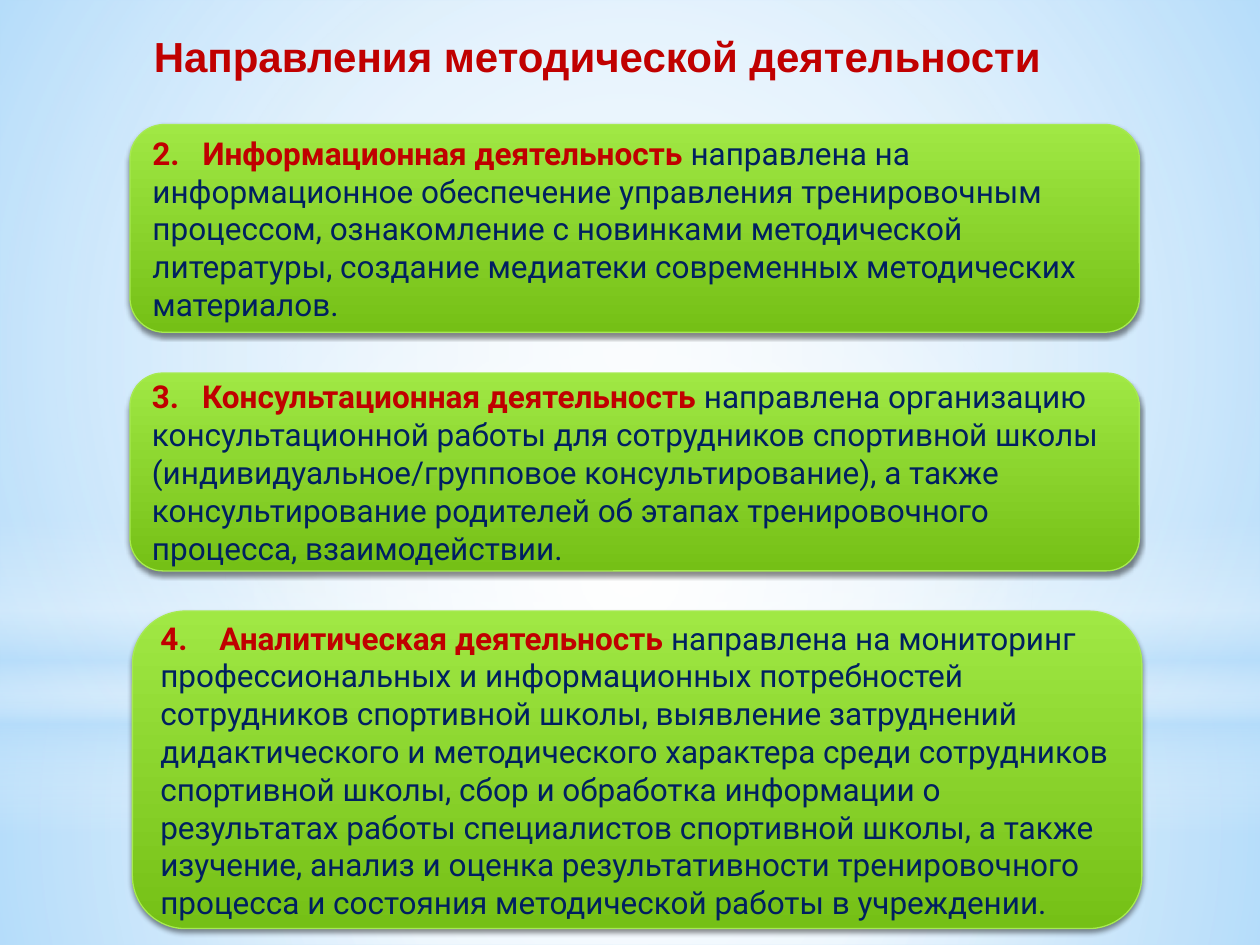
from dataclasses import dataclass
from typing import NamedTuple, Optional

import pptx
import pptx.dml.color
import pptx.enum.shapes
import pptx.enum.text
import pptx.oxml
import pptx.oxml.ns
import pptx.util

Cm = pptx.util.Cm
Pt = pptx.util.Pt
Preset = pptx.enum.shapes.MSO_SHAPE
Align = pptx.enum.text.PP_ALIGN
Anchor = pptx.enum.text.MSO_ANCHOR
AutoSize = pptx.enum.text.MSO_AUTO_SIZE
NAMESPACE = pptx.oxml.ns.nsdecls("a")


@dataclass(frozen=True)
class Theme:
    background: str = "B9DEFA"
    light: str = "FFFFFF"
    sky: str = "B4DCFA"
    accent: str = "C00000"
    body: str = "002060"
    card_top: str = "A0E844"
    card_bottom: str = "75C016"
    card_line: str = "A7EA52"
    shadow: str = "000000"
    title_font: str = "Arial"
    body_font: str = "Roboto"
    title_size: int = 24
    body_size: int = 18


THEME = Theme()


class Box(NamedTuple):
    """Left, top, width and height in centimetres."""
    left: float
    top: float
    width: float
    height: float

    def lengths(self) -> list:
        return [Cm(value) for value in self]


class Stop(NamedTuple):
    position: int
    colour: str
    opacity: int = 100


class Backdrop(NamedTuple):
    preset: int
    box: Box
    stops: list
    angle: Optional[int] = None  # None means a circular gradient


class Card(NamedTuple):
    box: Box
    number: str
    heading: str
    text: str
    tab: float


SLIDE_WIDTH, SLIDE_HEIGHT = 25.4, 19.05
HORIZON = 14.17
CARD_LEFT, CARD_WIDTH = 2.62, 20.35
TITLE_BOX = Box(2.54, 0.48, 19, 1.27)

BACKDROPS = [
    # Ground, sky, horizon band and central glow
    Backdrop(Preset.RECTANGLE, Box(0, HORIZON, SLIDE_WIDTH, SLIDE_HEIGHT - HORIZON),
             [Stop(0, THEME.light, 91), Stop(37, THEME.light, 76), Stop(100, THEME.sky, 79)]),
    Backdrop(Preset.RECTANGLE, Box(0, 0, SLIDE_WIDTH, HORIZON),
             [Stop(0, THEME.light, 89), Stop(48, THEME.light, 62), Stop(100, THEME.sky, 79)]),
    Backdrop(Preset.RECTANGLE, Box(0, 10.46, SLIDE_WIDTH, 6.35),
             [Stop(0, THEME.light, 0), Stop(29, THEME.light, 30), Stop(45, THEME.sky, 40),
              Stop(55, THEME.light, 26), Stop(65, THEME.sky, 60), Stop(100, THEME.light, 0)], 90),
    Backdrop(Preset.OVAL, Box(0, 4.45, SLIDE_WIDTH, HORIZON),
             [Stop(0, THEME.light), Stop(56, THEME.light, 0)]),
]

CARDS = [
    Card(Box(CARD_LEFT, 2.51, CARD_WIDTH, 4.19), "2.", "Информационная деятельность ",
         "направлена на информационное обеспечение управления тренировочным процессом, "
         "ознакомление с новинками методической литературы, создание медиатеки "
         "современных методических материалов.", 1.01),
    Card(Box(CARD_LEFT, 7.52, CARD_WIDTH, 3.99), "3.", "Консультационная деятельность ",
         "направлена организацию консультационной работы для сотрудников спортивной школы "
         "(индивидуальное/групповое консультирование), а также консультирование родителей "
         "об этапах тренировочного процесса, взаимодействии.", 1.01),
    Card(Box(CARD_LEFT + 0.05, 12.32, CARD_WIDTH, 6.4), "4.", "Аналитическая деятельность ",
         "направлена на мониторинг профессиональных и информационных потребностей "
         "сотрудников спортивной школы, выявление затруднений дидактического и "
         "методического характера среди сотрудников спортивной школы, сбор и обработка "
         "информации о результатах работы специалистов спортивной школы, а также изучение, "
         "анализ и оценка результативности тренировочного процесса и состояния "
         "методической работы в учреждении.", 1.19),
]


def rgb(colour: str) -> pptx.dml.color.RGBColor:
    return pptx.dml.color.RGBColor.from_string(colour)


def set_attributes(target, values: dict) -> None:
    for name, value in values.items():
        setattr(target, name, value)


def add_run(paragraph, text: str, font: str, size: int, colour: str, bold: bool) -> None:
    run = paragraph.add_run()
    run.text = text
    set_attributes(run.font, {"name": font, "size": Pt(size), "bold": bold})
    run.font.color.rgb = rgb(colour)


def fill_gradient(shape, stops: list, angle: Optional[int]) -> None:
    stop_xml = "".join(
        f'<a:gs pos="{stop.position * 1000}"><a:srgbClr val="{stop.colour}">'
        f'<a:alpha val="{stop.opacity * 1000}"/></a:srgbClr></a:gs>' for stop in stops)
    if angle is None:
        direction = ('<a:path path="circle"><a:fillToRect l="50000" t="50000" '
                     'r="50000" b="50000"/></a:path>')
    else:
        direction = f'<a:lin ang="{angle * 60000}" scaled="0"/>'
    gradient = pptx.oxml.parse_xml(
        f'<a:gradFill {NAMESPACE} rotWithShape="1"><a:gsLst>{stop_xml}</a:gsLst>'
        f'{direction}</a:gradFill>')
    shape.fill.background()
    properties = shape.element.spPr
    properties.replace(properties.find(pptx.oxml.ns.qn("a:noFill")), gradient)


def add_gradient_shape(slide, preset: int, box: Box, stops: list, angle: Optional[int]):
    shape = slide.shapes.add_shape(preset, *box.lengths())
    shape.shadow.inherit = False
    fill_gradient(shape, stops, angle)
    shape.line.fill.background()
    return shape


def add_title(slide, text: str) -> None:
    title = slide.shapes.title
    set_attributes(title, dict(zip(("left", "top", "width", "height"), TITLE_BOX.lengths())))
    set_attributes(title.text_frame, {"word_wrap": True, "vertical_anchor": Anchor.MIDDLE,
                                      "auto_size": AutoSize.SHAPE_TO_FIT_TEXT})
    paragraph = title.text_frame.paragraphs[0]
    paragraph.alignment = Align.CENTER
    add_run(paragraph, text, THEME.title_font, THEME.title_size, THEME.accent, True)
    # Bring the title in front of the backdrop
    title.element.getparent().append(title.element)


def add_card(slide, card: Card) -> None:
    stops = [Stop(0, THEME.card_top), Stop(100, THEME.card_bottom)]
    shape = add_gradient_shape(slide, Preset.ROUNDED_RECTANGLE, card.box, stops, 90)
    shape.line.color.rgb = rgb(THEME.card_line)
    shape.line.width = Pt(0.75)
    # Soft shadow below the card
    effects = shape.element.spPr.find(pptx.oxml.ns.qn("a:effectLst"))
    effects.append(pptx.oxml.parse_xml(
        f'<a:outerShdw {NAMESPACE} blurRad="{Pt(3.1)}" dist="{Pt(1.8)}" dir="5400000" '
        f'rotWithShape="0"><a:srgbClr val="{THEME.shadow}"><a:alpha val="45000"/>'
        f'</a:srgbClr></a:outerShdw>'))
    # Numbered heading, a tab stop apart, then the description
    set_attributes(shape.text_frame, {"word_wrap": True, "vertical_anchor": Anchor.MIDDLE})
    paragraph = shape.text_frame.paragraphs[0]
    paragraph.alignment = Align.LEFT
    paragraph._p.get_or_add_pPr().append(pptx.oxml.parse_xml(
        f'<a:tabLst {NAMESPACE}><a:tab pos="{Cm(card.tab)}" algn="l"/></a:tabLst>'))
    add_run(paragraph, f"{card.number}\t{card.heading}", THEME.body_font, THEME.body_size,
            THEME.accent, True)
    add_run(paragraph, card.text, THEME.body_font, THEME.body_size, THEME.body, False)


def main() -> None:
    presentation = pptx.Presentation()
    set_attributes(presentation, {"slide_width": Cm(SLIDE_WIDTH),
                                  "slide_height": Cm(SLIDE_HEIGHT)})
    slide = presentation.slides.add_slide(presentation.slide_layouts[5])
    slide.background.fill.solid()
    slide.background.fill.fore_color.rgb = rgb(THEME.background)
    for backdrop in BACKDROPS:
        add_gradient_shape(slide, *backdrop)
    add_title(slide, "Направления методической деятельности")
    for card in CARDS:
        add_card(slide, card)
    presentation.save("out.pptx")


if __name__ == "__main__":
    main()
